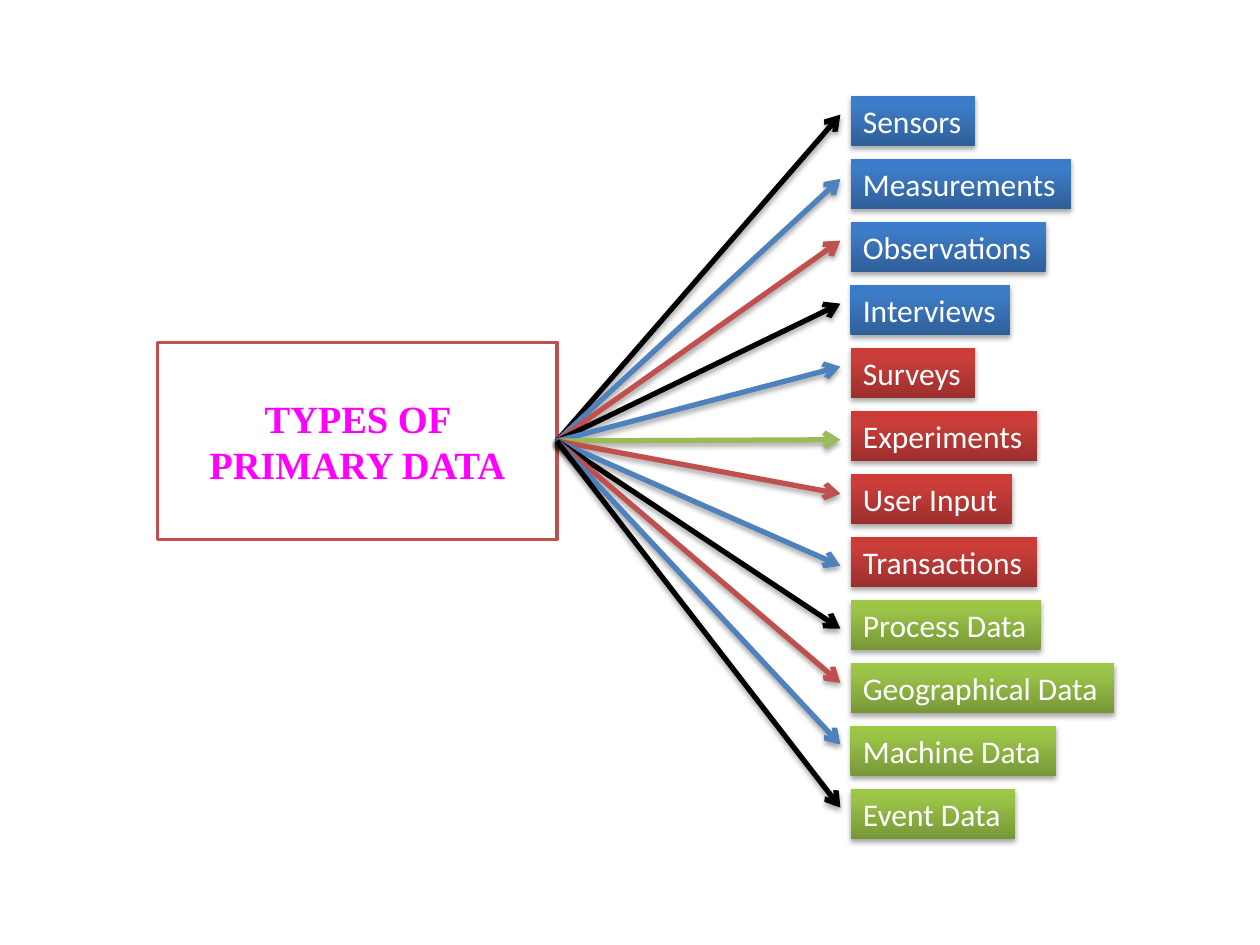
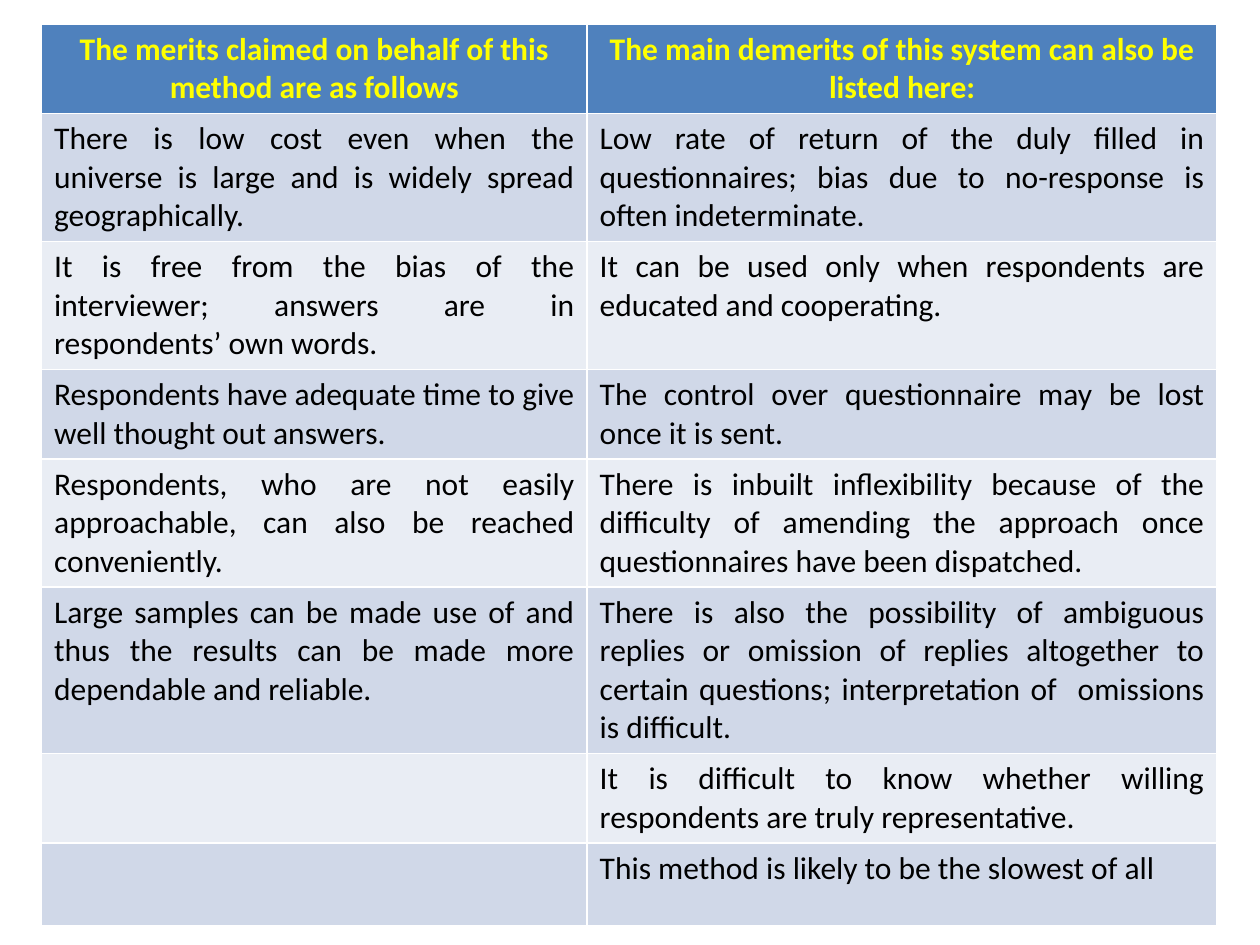
"""Build two slides: types of primary data, and merits and demerits of a method."""
from copy import deepcopy
from dataclasses import dataclass

from lxml.etree import SubElement
from pptx import Presentation
from pptx.dml.color import RGBColor
from pptx.enum.shapes import MSO_CONNECTOR as Connector, MSO_SHAPE as Preset
from pptx.enum.text import MSO_ANCHOR as Anchor, MSO_AUTO_SIZE as AutoSize, PP_ALIGN as Align
from pptx.oxml.ns import qn
from pptx.util import Inches, Pt


@dataclass(frozen=True)
class Theme:
    white: str = "FFFFFF"
    black: str = "000000"
    blue: str = "4F81BD"
    red: str = "C0504D"
    green: str = "9BBB59"
    title: str = "FF00FF"
    heading: str = "FFFF00"
    bands: tuple = ("D0D8E8", "E9EDF4")
    blue_shades: tuple = ("2F5F99", "3D7CC7", "3A7CCB")
    red_shades: tuple = ("9C2F2D", "CB3E3A", "CE3B37")
    green_shades: tuple = ("779737", "9BC348", "9DC746")
    shade_positions: tuple = (0, 0.8, 1)
    title_font: str = "Times New Roman"
    body_font: str = "Calibri"
    title_size: int = 22
    body_size: int = 18


@dataclass(frozen=True)
class DataType:
    label: str
    columns: float
    shades: tuple
    arrow_row: float
    arrow_colour: str


THEME = Theme()
GRID_COLUMNS, GRID_ROWS = 20, 15
BOX_COLUMN, FIRST_BOX_ROW, BOX_ROWS = 13.5, 1.52, 0.8
ARROW_COLUMN = 13.34

DATA_TYPES = (
    DataType("Sensors", 1.98, THEME.blue_shades, 1.82, THEME.black),
    DataType("Measurements", 3.5, THEME.blue_shades, 2.84, THEME.blue),
    DataType("Observations", 3.1, THEME.blue_shades, 3.82, THEME.red),
    DataType("Interviews", 2.54, THEME.blue_shades, 4.82, THEME.black),
    DataType("Surveys", 1.98, THEME.red_shades, 5.82, THEME.blue),
    DataType("Experiments", 2.96, THEME.red_shades, 6.98, THEME.green),
    DataType("User Input", 2.56, THEME.red_shades, 7.84, THEME.red),
    DataType("Transactions", 2.96, THEME.red_shades, 8.98, THEME.blue),
    DataType("Process Data", 3.02, THEME.green_shades, 9.98, THEME.black),
    DataType("Geographical Data", 4.18, THEME.green_shades, 10.84, THEME.red),
    DataType("Machine Data", 3.26, THEME.green_shades, 11.82, THEME.blue),
    DataType("Event Data", 2.62, THEME.green_shades, 12.82, THEME.black),
)

COMPARISON = (
    ("The merits claimed on behalf of this method are as follows",
     "The main demerits of this system can also be listed here:"),
    ("There is low cost even when the universe is large and is widely spread geographically.",
     "Low rate of return of the duly filled in questionnaires; bias due to no-response is often "
     "indeterminate."),
    ("It is free from the bias of the interviewer; answers are in respondents’ own words.",
     "It can be used only when respondents are educated and cooperating."),
    ("Respondents have adequate time to give well thought out answers.",
     "The control over questionnaire may be lost once it is sent."),
    ("Respondents, who are not easily approachable, can also be reached conveniently.",
     "There is inbuilt inflexibility because of the difficulty of amending the approach once "
     "questionnaires have been dispatched."),
    ("Large samples can be made use of and thus the results can be made more dependable and "
     "reliable.",
     "There is also the possibility of ambiguous replies or omission of replies altogether to "
     "certain questions; interpretation of  omissions is difficult."),
    ("", "It is difficult to know whether willing respondents are truly representative."),
    ("", "This method is likely to be the slowest of all"),
)
COMPARISON_COLUMNS = (8.66, 10)
COMPARISON_ROWS = (1.32, 1.92, 1.34, 1.34, 1.92, 2.5, 1.32, 1.32)


def grid(units: float) -> int:
    """Return the length of a number of grid columns or rows."""
    return Inches(units * 10 / GRID_COLUMNS)


def colour(code: str) -> RGBColor:
    """Return the colour for a hexadecimal code."""
    return RGBColor.from_string(code)


def write(frame, text: str, *, color: str, size: int = THEME.body_size,
          font: str = THEME.body_font, bold: bool = False, align=Align.LEFT) -> None:
    """Write one formatted paragraph into a text frame."""
    paragraph = frame.paragraphs[0]
    paragraph.alignment = align
    paragraph.font.size = Pt(size)
    if text:
        run = paragraph.add_run()
        run.text = text
        run.font.size, run.font.name, run.font.bold = Pt(size), font, bold
        run.font.color.rgb = colour(color)


def add_shadow(shape) -> None:
    """Give a shape or connector a soft shadow that falls straight down."""
    properties = shape._element.spPr
    effects = SubElement(properties, qn("a:effectLst"))
    shadow = SubElement(effects, qn("a:outerShdw"), blurRad=str(Pt(3.1)), dist=str(Pt(1.8)),
                        dir="5400000", rotWithShape="0")
    shade = SubElement(shadow, qn("a:srgbClr"), val=THEME.black)
    SubElement(shade, qn("a:alpha"), val="35000")


def fill_gradient(shape, shades: tuple) -> None:
    """Fill a shape with shades that run from the bottom to the top."""
    shape.fill.gradient()
    shape.fill.gradient_angle = 90
    stops = shape._element.spPr.find(".//" + qn("a:gsLst"))
    stops.append(deepcopy(stops[0]))
    for stop, shade, position in zip(shape.fill.gradient_stops, shades, THEME.shade_positions):
        stop.color.rgb = colour(shade)
        stop.position = position


def add_box(slide, data_type: DataType, row: float) -> None:
    """Draw the labelled box of a data type."""
    box = slide.shapes.add_shape(Preset.RECTANGLE, grid(BOX_COLUMN), grid(row),
                                 grid(data_type.columns), grid(BOX_ROWS))
    fill_gradient(box, data_type.shades)
    box.line.fill.background()
    add_shadow(box)
    box.text_frame.word_wrap = False
    box.text_frame.auto_size = AutoSize.SHAPE_TO_FIT_TEXT
    box.text_frame.vertical_anchor = Anchor.TOP
    write(box.text_frame, data_type.label, color=THEME.white)


def add_arrow(slide, source, data_type: DataType) -> None:
    """Draw the arrow from the source's right side to a data type."""
    arrow = slide.shapes.add_connector(Connector.STRAIGHT, 0, 0, grid(ARROW_COLUMN),
                                       grid(data_type.arrow_row))
    arrow.begin_connect(source, 3)
    arrow.line.color.rgb = colour(data_type.arrow_colour)
    arrow.line.width = Pt(3)
    SubElement(arrow.line._get_or_add_ln(), qn("a:tailEnd"), type="arrow")
    add_shadow(arrow)


def build_types_slide(presentation) -> None:
    """Build the fan of primary data types."""
    slide = presentation.slides.add_slide(presentation.slide_layouts[5])
    title = slide.shapes.title
    title.left, title.top, title.width, title.height = map(grid, (2.5, 6.16, 6.34, 1.68))
    title.fill.solid()
    title.fill.fore_color.rgb = colour(THEME.white)
    title.line.color.rgb = colour(THEME.red)
    title.line.width = Pt(2)
    title.text_frame.word_wrap = True
    title.text_frame.auto_size = AutoSize.SHAPE_TO_FIT_TEXT
    write(title.text_frame, "TYPES OF PRIMARY DATA", color=THEME.title, size=THEME.title_size,
          font=THEME.title_font, bold=True, align=Align.CENTER)
    for index, data_type in enumerate(DATA_TYPES):
        add_box(slide, data_type, FIRST_BOX_ROW + index)
    for data_type in DATA_TYPES:
        add_arrow(slide, title, data_type)


def build_comparison_slide(presentation) -> None:
    """Build the table of merits and demerits."""
    slide = presentation.slides.add_slide(presentation.slide_layouts[6])
    table = slide.shapes.add_table(len(COMPARISON), len(COMPARISON_COLUMNS), grid(0.66),
                                   grid(0.38), grid(18.66), grid(14.12)).table
    for column, width in zip(table.columns, COMPARISON_COLUMNS):
        column.width = grid(width)
    for index, (row, height, texts) in enumerate(zip(table.rows, COMPARISON_ROWS, COMPARISON)):
        row.height = grid(height)
        heading = index == 0
        for cell, text in zip(row.cells, texts):
            cell.fill.solid()
            cell.fill.fore_color.rgb = colour(
                THEME.blue if heading else THEME.bands[(index - 1) % 2])
            write(cell.text_frame, text, bold=heading,
                  color=THEME.heading if heading else THEME.black,
                  align=Align.CENTER if heading else Align.JUSTIFY)


def main() -> None:
    """Build and save the presentation."""
    presentation = Presentation()
    presentation.slide_width = grid(GRID_COLUMNS)
    presentation.slide_height = grid(GRID_ROWS)
    build_types_slide(presentation)
    build_comparison_slide(presentation)
    presentation.save("out.pptx")


if __name__ == "__main__":
    main()
